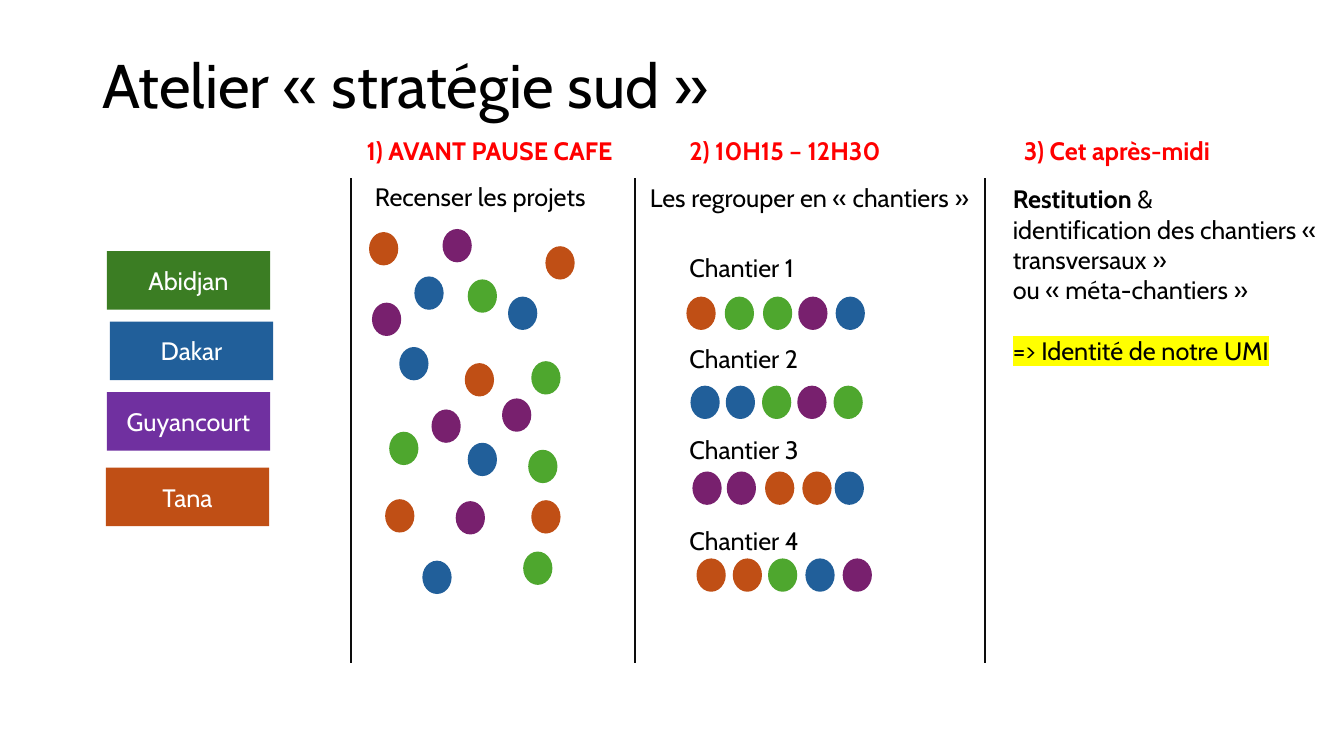
from dataclasses import dataclass

from lxml.etree import SubElement
from pptx import Presentation
from pptx.dml.color import RGBColor
from pptx.enum.shapes import MSO_CONNECTOR, MSO_SHAPE
from pptx.enum.text import MSO_ANCHOR, PP_ALIGN
from pptx.oxml.ns import qn
from pptx.util import Pt


@dataclass(frozen=True)
class Theme:
    font: str = "Cabin"
    title_size: float = 44
    body_size: float = 18
    text: str = "000000"
    on_fill: str = "FFFFFF"
    heading: str = "FF0000"
    highlight: str = "FFFF00"
    divider: str = "0D0D0D"
    abidjan: str = "3B7D23"
    guyancourt: str = "7030A0"
    blue: str = "215F9A"
    green: str = "4EA72E"
    orange: str = "C04F15"
    purple: str = "78206E"


@dataclass(frozen=True)
class Box:
    left: float
    top: float
    width: float
    height: float

    def inside(self, dx, dy, width, height):
        return Box(self.left + dx, self.top + dy, width, height)

    def lengths(self):
        return Pt(self.left), Pt(self.top), Pt(self.width), Pt(self.height)


THEME = Theme()
LINE = 21.7            # height of one line of body text
HEADING_HEIGHT = 34    # distance from a column's top to its divider
DOT_SIZE = (20.9, 23.8)

# Dot positions from the top of the first divider
PROJECTS = {
    THEME.blue: [(45.4, 70.3), (83.5, 189.1), (34.6, 120.7), (51.1, 273.3), (112.3, 84.7)],
    THEME.green: [(27.4, 181.2), (83.5, 72.4), (123.1, 266.8), (128.9, 130.8), (126.7, 194.1)],
    THEME.orange: [(13, 38.6), (81.4, 132.2), (24.5, 229.4), (128.9, 230.1), (139, 48.7)],
    THEME.purple: [(65.5, 36.4), (15.1, 89), (57.6, 165.3), (74.9, 230.8), (108, 157.4)],
}

# Each chantier: name, dot row top, dot lefts, dot colours
B, G, O, P = THEME.blue, THEME.green, THEME.orange, THEME.purple
CHANTIERS = [
    ("Chantier 1", 84.7, (36.7, 64.1, 91.4, 116.6, 143.3), (O, G, G, P, B)),
    ("Chantier 2", 148.3, (39.6, 64.8, 90.7, 115.9, 141.8), (B, B, G, P, G)),
    ("Chantier 3", 209.6, (41, 65.5, 92.9, 119.5, 142.6), (P, P, O, O, B)),
    ("Chantier 4", 271.7, (43.9, 69.8, 95, 121.7, 148.3), (O, O, G, B, P)),
]


def add_run(paragraph, text, color=THEME.text, size=THEME.body_size, bold=False):
    run = paragraph.add_run()
    run.text = text
    run.font.name = THEME.font
    run.font.size = Pt(size)
    run.font.bold = bold
    run.font.color.rgb = RGBColor.from_string(color)
    return run


def highlight(run, color):
    properties = run.font._element
    mark = SubElement(properties, qn("a:highlight"))
    SubElement(mark, qn("a:srgbClr"), val=color)
    properties.find(qn("a:latin")).addprevious(mark)


def add_text_frame(slide, box):
    frame = slide.shapes.add_textbox(*box.lengths()).text_frame
    frame.word_wrap = True
    return frame


def add_label(slide, box, text, **style):
    add_run(add_text_frame(slide, box).paragraphs[0], text, **style)


def add_filled(slide, kind, box, color):
    shape = slide.shapes.add_shape(kind, *box.lengths())
    shape.shadow.inherit = False
    shape.fill.solid()
    shape.fill.fore_color.rgb = RGBColor.from_string(color)
    shape.line.fill.background()
    return shape


def add_dot(slide, column, dx, dy, color):
    add_filled(slide, MSO_SHAPE.OVAL, column.inside(dx, dy, *DOT_SIZE), color)


def add_title(slide, box):
    frame = add_text_frame(slide, box)
    frame.vertical_anchor = MSO_ANCHOR.MIDDLE
    frame.paragraphs[0].line_spacing = 0.9
    add_run(frame.paragraphs[0], "Atelier «\u00a0stratégie sud\u00a0»".replace("\u00a0", " "),
            size=THEME.title_size)


def add_cities(slide, box):
    cities = [
        ("Abidjan", THEME.abidjan, 0.7, 0),
        ("Dakar", THEME.blue, 2.9, 50.4),
        ("Guyancourt", THEME.guyancourt, 0.7, 100.8),
        ("Tana", THEME.orange, 0, 154.8),
    ]
    for name, color, dx, dy in cities:
        city = add_filled(slide, MSO_SHAPE.RECTANGLE, box.inside(dx, dy, box.width, 41.8), color)
        city.text_frame.vertical_anchor = MSO_ANCHOR.MIDDLE
        paragraph = city.text_frame.paragraphs[0]
        paragraph.alignment = PP_ALIGN.CENTER
        add_run(paragraph, name, color=THEME.on_fill)


def start_column(slide, box, heading, heading_dx):
    """Adds the heading and the divider, and returns the area beside the divider."""
    add_label(slide, box.inside(heading_dx, 0, 196.6, 29), heading,
              color=THEME.heading, bold=True)
    body = box.inside(0, HEADING_HEIGHT, box.width, box.height - HEADING_HEIGHT)
    divider = slide.shapes.add_connector(
        MSO_CONNECTOR.STRAIGHT, Pt(body.left), Pt(body.top),
        Pt(body.left), Pt(body.top + body.height))
    divider.line.width = Pt(1.5)
    divider.line.color.rgb = RGBColor.from_string(THEME.divider)
    SubElement(divider._element.spPr, qn("a:effectLst"))
    return body


def add_inventory(slide, box):
    body = start_column(slide, box, "1) AVANT PAUSE CAFE", 4.3)
    add_label(slide, body.inside(10.1, -1, 175, 29), "Recenser les projets")
    for color, places in PROJECTS.items():
        for dx, dy in places:
            add_dot(slide, body, dx, dy, color)


def add_grouping(slide, box):
    body = start_column(slide, box, "2) 10H15 – 12H30", 31.7)
    add_label(slide, body.inside(3.6, -0.3, 242.6, 29), "Les regrouper en « chantiers »")

    # Chantier names, each leaving two lines for its dots
    names = add_text_frame(slide, body.inside(31.7, 49.4, 229.7, 225.4))
    for index, (name, row_top, lefts, colors) in enumerate(CHANTIERS):
        paragraph = names.add_paragraph() if index else names.paragraphs[0]
        paragraph.space_before = Pt(2 * LINE if index else 0)
        add_run(paragraph, name)
        for dx, color in zip(lefts, colors):
            add_dot(slide, body, dx, row_top, color)


def add_restitution(slide, box):
    body = start_column(slide, box, "3) Cet après-midi", 20.9)
    frame = add_text_frame(slide, body.inside(13, 0.4, 242.6, 138.2))
    sharing = frame.paragraphs[0]
    add_run(sharing, "Restitution", bold=True)
    add_run(sharing, " & ")
    sharing.add_line_break()
    add_run(sharing, "identification des chantiers « transversaux »")
    add_run(frame.add_paragraph(), "ou « méta-chantiers »")
    identity = frame.add_paragraph()
    identity.space_before = Pt(LINE)
    highlight(add_run(identity, "=> Identité de notre UMI"), THEME.highlight)


def main():
    presentation = Presentation()
    presentation.slide_width, presentation.slide_height = Pt(960), Pt(540)
    slide = presentation.slides.add_slide(presentation.slide_layouts[6])
    add_title(slide, Box(66, 10.8, 828, 104.4))
    add_cities(slide, Box(75.6, 179.3, 116.6, 196.6))
    add_inventory(slide, Box(250.6, 93.2, 203, 380.3))
    add_grouping(slide, Box(453.6, 93.2, 249.8, 380.3))
    add_restitution(slide, Box(703.4, 93.2, 256.6, 380.3))
    presentation.save("out.pptx")


if __name__ == "__main__":
    main()
